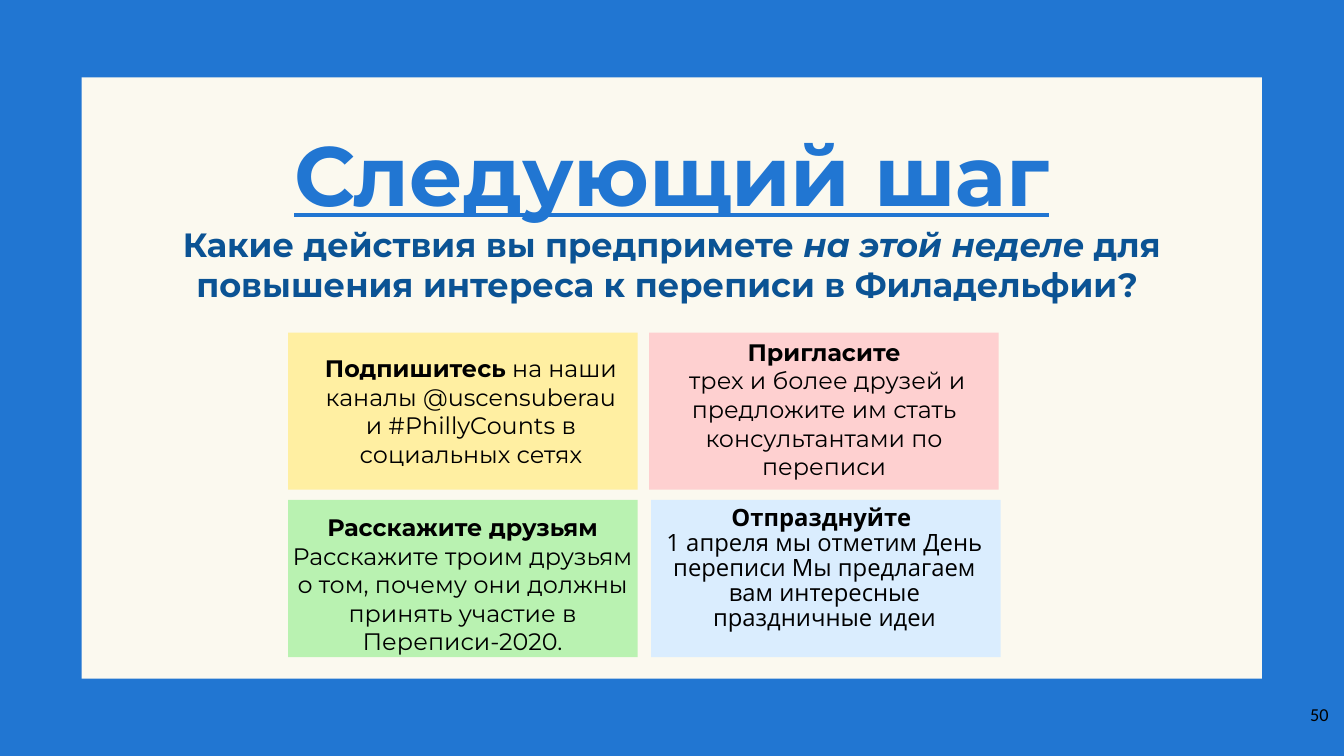
from pptx import Presentation
from pptx.dml.color import RGBColor
from pptx.enum import shapes, text
from pptx.util import Cm, Pt

WIDTH, HEIGHT = 33.87, 19.05
BLUE, NAVY, BLACK, CREAM = "2176D2", "0B5394", "000000", "FBF9EF"
CARD_WIDTH, CARD_HEIGHT = 8.81, 3.96


def colour(value):
    return RGBColor.from_string(value)


def add_rectangle(page, left, top, width, height, fill):
    shape = page.shapes.add_shape(
        shapes.MSO_SHAPE.RECTANGLE, Cm(left), Cm(top), Cm(width), Cm(height))
    shape.shadow.inherit = False
    shape.fill.solid()
    shape.fill.fore_color.rgb = colour(fill)
    shape.line.fill.background()


def add_text(page, left, top, width, height, paragraphs,
             align=text.PP_ALIGN.CENTER, spacing=None):
    """Each paragraph is a list of (words, font settings) spans."""
    box = page.shapes.add_textbox(Cm(left), Cm(top), Cm(width), Cm(height))
    frame = box.text_frame
    frame.word_wrap = True
    for index, spans in enumerate(paragraphs):
        para = frame.paragraphs[0] if index == 0 else frame.add_paragraph()
        para.alignment = align
        if spacing:
            para.line_spacing = spacing
        for words, settings in spans:
            span = para.add_run()
            span.text = words
            font = span.font
            font.name = settings.get("name", "Montserrat")
            font.size = Pt(settings["size"])
            font.bold = settings.get("bold", False)
            font.italic = settings.get("italic", False)
            font.underline = settings.get("underline", False)
            font.color.rgb = colour(settings.get("color", BLACK))


def add_border(page, width, height, band, side):
    for top in (height - band, 0):
        add_rectangle(page, 0, top, width, band, BLUE)
    for left in (0, width - side):
        add_rectangle(page, left, 0, side, height, BLUE)


def add_heading(page, left, top, width, height):
    title = {"size": 60, "bold": True, "underline": True, "color": BLUE}
    question = {"size": 24, "bold": True, "color": NAVY}
    add_text(page, left, top, width, height, [
        [("Следующий шаг", title)],
        [("Какие действия вы предпримете", question),
         (" на этой неделе", {**question, "italic": True}),
         (" для повышения интереса к переписи в Филадельфии? ", question)],
    ])


def add_card(page, left, top, fill, inset, drop, text_width, paragraphs,
             name="Montserrat", spacing=None):
    """Spans are (words, bold); inset and drop place the text in the card."""
    add_rectangle(page, left, top, CARD_WIDTH, CARD_HEIGHT, fill)
    styled = [[(words, {"size": 17, "name": name, "bold": bold})
               for words, bold in spans] for spans in paragraphs]
    add_text(page, left + inset, top + drop, text_width, 3, styled,
             spacing=spacing)


def add_actions(page, left, top):
    right, lower = left + 9.1, top + 4.22
    add_card(page, left, top, "FFEFA2", 0.66, 0.41, 7.9, [
        [("Подпишитесь", True),
         (" на наши каналы @uscensuberau и #PhillyCounts в социальных сетях",
          False)]])
    add_card(page, right, top, "FED0D0", 0.46, 0, 7.9, [
        [("Пригласите", True)],
        [(" трех и более друзей и предложите им стать консультантами "
          "по переписи", False)]])
    add_card(page, left, lower, "B9F2B1", -0.17, 0.2, 9.14, [
        [("Расскажите друзьям", True)],
        [("Расскажите троим друзьям о том, почему они должны принять "
          "участие в Переписи-2020.", False)]])
    add_card(page, right + 0.05, lower, "DAEDFE", -0.15, 0.03, 9.04, [
        [("Отпразднуйте ", True)],
        [("1 апреля мы отметим День переписи Мы предлагаем вам интересные "
          "праздничные идеи", False)]], name="Open Sans", spacing=0.88)


def add_page_number(page, left, top, width, height):
    add_text(page, left, top, width, height,
             [[("50", {"size": 13, "name": "Calibri"})]],
             align=text.PP_ALIGN.RIGHT)


def main():
    deck = Presentation()
    deck.slide_width, deck.slide_height = Cm(WIDTH), Cm(HEIGHT)
    page = deck.slides.add_slide(deck.slide_layouts[6])
    page.background.fill.solid()
    page.background.fill.fore_color.rgb = colour(CREAM)
    add_border(page, WIDTH, HEIGHT, 1.95, 2.06)
    add_page_number(page, 31.7, 17.6, 2.03, 1.45)
    add_heading(page, 3.28, 2.97, 27.3, 2.82)
    add_actions(page, 7.26, 8.38)
    deck.save("out.pptx")


if __name__ == "__main__":
    main()
